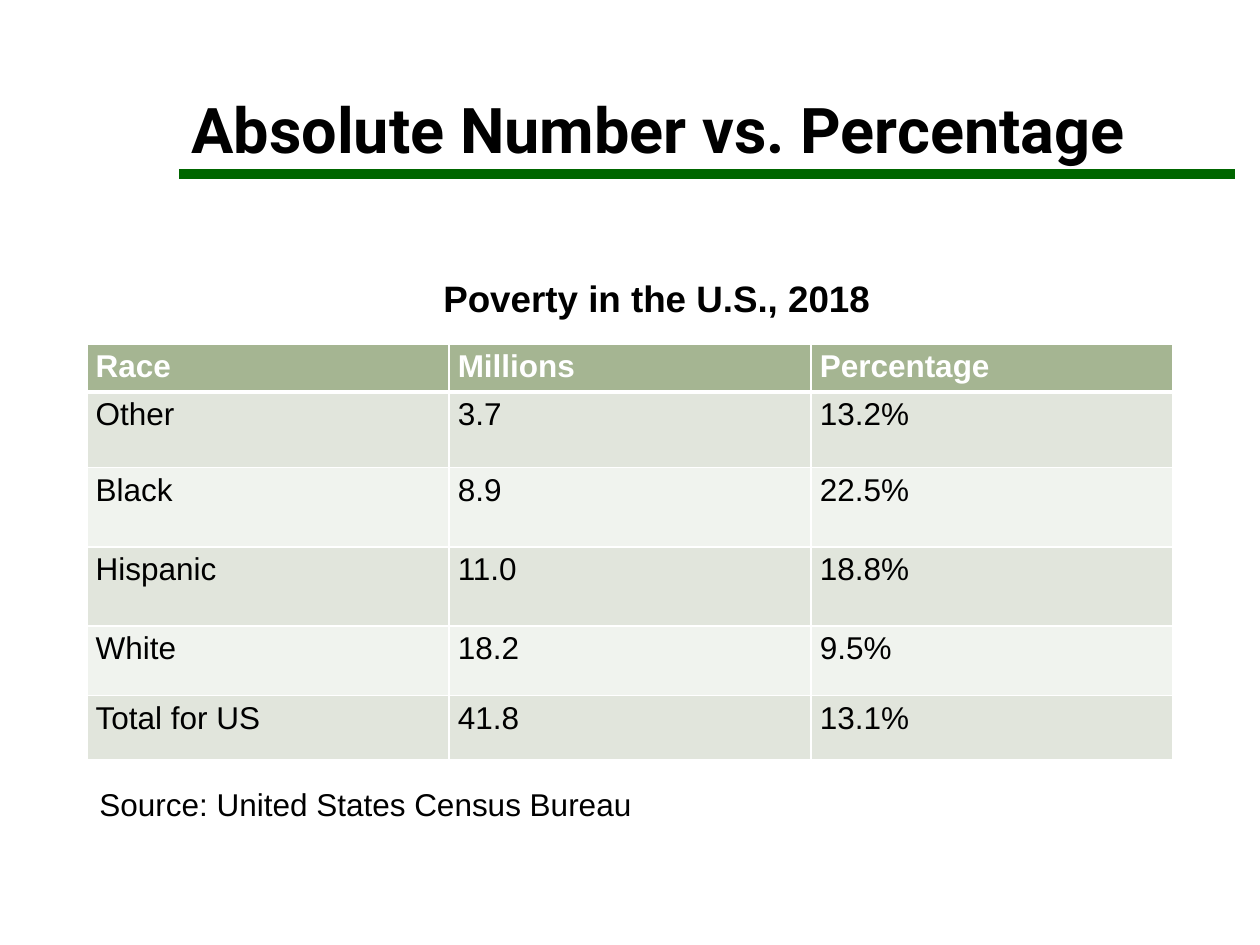
"""Build a slide comparing absolute numbers and percentages of poverty."""
import pptx
import pptx.util
import pptx.dml.color
import pptx.enum.shapes
import pptx.enum.text
import pptx.oxml.ns
import lxml.etree

Inches = pptx.util.Inches
Pt = pptx.util.Pt
qn = pptx.oxml.ns.qn


def rgb(value):
    return pptx.dml.color.RGBColor.from_string(value)


def style(p, size, bold=False, color="000000", name="Arial"):
    p.font.size = Pt(size)
    p.font.bold = bold
    p.font.name = name
    p.font.color.rgb = rgb(color)


prs = pptx.Presentation()
prs.slide_width, prs.slide_height = Inches(10), Inches(7.5)
s = prs.slides.add_slide(prs.slide_layouts[6])

rule = s.shapes.add_connector(
    pptx.enum.shapes.MSO_CONNECTOR.STRAIGHT,
    Inches(1.42), Inches(1.38), Inches(9.8), Inches(1.38))
rule.line.color.rgb = rgb("006600")
rule.line.width = Pt(6)
lxml.etree.SubElement(rule._element.spPr, qn("a:effectLst"))

texts = [
    ("Absolute Number vs. Percentage", 1.42, 0.25, 8.39, 1.13, 36, True, "Roboto"),
    ("Poverty in the U.S., 2018", 3.42, 2.14, 3.62, 0.45, 21, True, "Arial"),
    ("Source: United States Census Bureau", 0.69, 6.18, 4.47, 0.4, 18, False, "Arial"),
]
for text, left, top, width, height, size, bold, name in texts:
    sp = s.shapes.add_textbox(Inches(left), Inches(top), Inches(width), Inches(height))
    tf = sp.text_frame
    p = tf.paragraphs[0]
    p.text = text
    style(p, size, bold, name=name)
    if name == "Roboto":
        tf.word_wrap = True
        tf.vertical_anchor = pptx.enum.text.MSO_ANCHOR.BOTTOM
        p.line_spacing = 0.9

rows = [
    ("Race", "Millions", "Percentage"),
    ("Other", "3.7", "13.2%"),
    ("Black", "8.9", "22.5%"),
    ("Hispanic", "11.0", "18.8%"),
    ("White", "18.2", "9.5%"),
    ("Total for US", "41.8", "13.1%"),
]
heights = [0.38, 0.6, 0.63, 0.63, 0.55, 0.51]
table = s.shapes.add_table(
    len(rows), 3, Inches(0.69), Inches(2.73), Inches(8.62), Inches(sum(heights))).table
for column in table.columns:
    column.width = Inches(8.62 / 3)

for i, (row, height) in enumerate(zip(rows, heights)):
    table.rows[i].height = Inches(height)
    header = i == 0
    fill = "A5B592" if header else ("F0F3EE", "E1E5DC")[i % 2]
    for j, text in enumerate(row):
        cell = table.cell(i, j)
        cell.margin_left = cell.margin_right = Inches(0.07)
        cell.margin_top = cell.margin_bottom = Inches(0.04)
        tcPr = cell._tc.get_or_add_tcPr()
        for side in "LRTB":
            thick = (i, side) in [(0, "B"), (1, "T")]
            ln = lxml.etree.SubElement(
                tcPr, qn(f"a:ln{side}"), w=str(Pt(3 if thick else 1)))
            solid = lxml.etree.SubElement(ln, qn("a:solidFill"))
            lxml.etree.SubElement(solid, qn("a:srgbClr"), val="FFFFFF")
        cell.fill.solid()
        cell.fill.fore_color.rgb = rgb(fill)
        p = cell.text_frame.paragraphs[0]
        p.text = text
        style(p, 18, header, "FFFFFF" if header else "000000")

prs.save("out.pptx")
